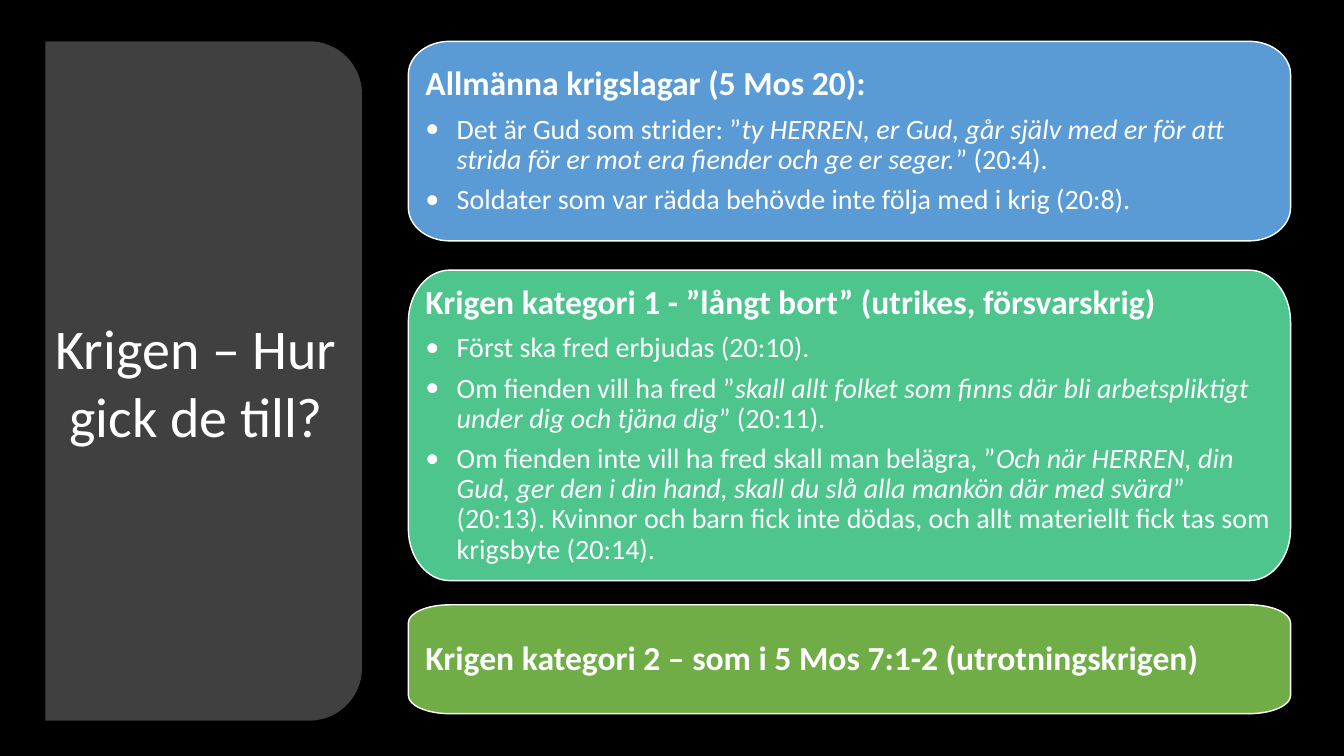
from lxml import etree
from pptx import Presentation
from pptx.dml.color import RGBColor
from pptx.enum.shapes import MSO_SHAPE
from pptx.enum.text import MSO_ANCHOR, MSO_AUTO_SIZE, PP_ALIGN
from pptx.oxml.ns import qn
from pptx.util import Inches, Pt

PANEL_SHAPE = MSO_SHAPE.ROUND_2_SAME_RECTANGLE
MIDDLE = MSO_ANCHOR.MIDDLE
NO_FIT = MSO_AUTO_SIZE.NONE
LEFT, CENTER = PP_ALIGN.LEFT, PP_ALIGN.CENTER
TITLE_ONLY = 5
CURVE = 0.55  # share of the way to the corner for a quarter ellipse

# Each card: top, height, colour, heading, bullets (odd parts are italic)
CARDS = [
    (0.41, 1.98, "5B9BD5", "Allmänna krigslagar (5 Mos 20):", [
        ["Det är Gud som strider: ”",
         "ty HERREN, er Gud, går själv med er för att strida för er mot era "
         "fiender och ge er seger.",
         "” (20:4)."],
        ["Soldater som var rädda behövde inte följa med i krig (20:8)."],
    ]),
    (2.68, 3.08, "4DC58D",
     "Krigen kategori 1 - ”långt bort” (utrikes, försvarskrig)", [
         ["Först ska fred erbjudas (20:10)."],
         ["Om fienden vill ha fred ”",
          "skall allt folket som finns där bli arbetspliktigt under dig och "
          "tjäna dig",
          "” (20:11)."],
         ["Om fienden inte vill ha fred skall man belägra, ”",
          "Och när HERREN, din Gud, ger den i din hand, skall du slå alla "
          "mankön där med svärd",
          "” (20:13). Kvinnor och barn fick inte dödas, och allt materiellt "
          "fick tas som krigsbyte (20:14)."],
     ]),
    (6.0, 1.08, "70AD47",
     "Krigen kategori 2 – som i 5 Mos 7:1-2 (utrotningskrigen)", []),
]


def color(hex_text):
    return RGBColor.from_string(hex_text)


class SlideBuilder:
    font_name = "Calibri"
    text_color = "FFFFFF"
    card_left, card_width = 4.05, 8.75
    corner_width = 0.41
    inset = 0.17
    indent = 0.31

    def __init__(self, page):
        self.page = page

    def background(self, fill):
        self.page.background.fill.solid()
        self.page.background.fill.fore_color.rgb = color(fill)

    def style(self, para, size, bold=False, align=LEFT):
        para.alignment = align
        para.font.name = self.font_name
        para.font.size = Pt(size)
        para.font.bold = bold
        para.font.color.rgb = color(self.text_color)

    def fill(self, shape, fill):
        shape.shadow.inherit = False
        shape.fill.solid()
        shape.fill.fore_color.rgb = color(fill)

    def frame(self, shape, inset):
        frame = shape.text_frame
        frame.word_wrap = True
        frame.auto_size = NO_FIT
        frame.vertical_anchor = MIDDLE
        frame.margin_left = frame.margin_right = Inches(inset)
        frame.margin_top = frame.margin_bottom = Inches(inset)
        return frame

    def title_panel(self, left, top, width, height, fill, text):
        # The panel is laid on its side, then turned a quarter
        panel = self.page.shapes.add_shape(
            PANEL_SHAPE,
            Inches(left + (width - height) / 2),
            Inches(top + (height - width) / 2),
            Inches(height), Inches(width))
        panel.rotation = 90
        self.fill(panel, fill)
        panel.line.fill.background()

        # Title in front of the panel, clear of its rounded side
        title = self.page.shapes.title
        title.element.addprevious(panel.element)
        title.left, title.top = Inches(left), Inches(top)
        title.width, title.height = Inches(width - 0.15), Inches(height)
        frame = self.frame(title, 0.05)
        frame.text = text
        self.style(frame.paragraphs[0], 40, align=CENTER)

    def card_shape(self, top, height):
        left, right = self.card_left, self.card_left + self.card_width
        bottom = top + height
        near_x, far_x = left + self.corner_width, right - self.corner_width
        near_y, far_y = top + height / 6, bottom - height / 6
        points = [(left, near_y), (near_x, top), (far_x, top),
                  (right, near_y), (right, far_y), (far_x, bottom),
                  (near_x, bottom), (left, far_y)]
        points = [(Inches(x), Inches(y)) for x, y in points]
        builder = self.page.shapes.build_freeform(*points[0])
        builder.add_line_segments(points[1:], close=True)
        box = builder.convert_to_shape()

        # Every other edge cuts a corner: bend it into a curve
        corners = [(0, 0), (box.width, 0), (box.width, box.height),
                   (0, box.height)]
        edges = list(box.element.iter(qn("a:lnTo")))[::2]
        for edge, corner in zip(edges, corners):
            self.bend(edge, corner)
        return box

    def bend(self, edge, corner):
        def place(point):
            return [int(point.get(axis)) for axis in "xy"]

        start, end = place(edge.getprevious()[-1]), place(edge[0])
        curve = etree.Element(qn("a:cubicBezTo"))
        for base, share in ((start, CURVE), (end, CURVE), (end, 0)):
            x, y = (round(value + share * (goal - value))
                    for value, goal in zip(base, corner))
            etree.SubElement(curve, qn("a:pt"), x=str(x), y=str(y))
        edge.getparent().replace(edge, curve)

    def card(self, top, height, fill, heading, bullets):
        box = self.card_shape(top, height)
        self.fill(box, fill)
        box.line.color.rgb = color("FFFFFF")
        box.line.width = Pt(1)

        frame = self.frame(box, self.inset)
        para = frame.paragraphs[0]
        para.text = heading
        self.card_style(para, 24, bold=True)
        for parts in bullets:
            self.bullet(frame.add_paragraph(), parts)

    def card_style(self, para, size, bold=False):
        self.style(para, size, bold)
        para.line_spacing = 0.9
        para.space_after = Pt(size * 0.35)

    def bullet(self, para, parts):
        for index, text in enumerate(parts):
            span = para.add_run()
            span.text = text
            if index % 2:
                span.font.italic = True
        self.card_style(para, 20)
        properties = para._p.get_or_add_pPr()
        properties.set("marL", str(Inches(self.indent)))
        properties.set("indent", str(-Inches(self.indent)))
        defaults = properties.find(qn("a:defRPr"))
        for tag, name, value in (("a:buFont", "typeface", self.font_name),
                                 ("a:buChar", "char", "•")):
            defaults.addprevious(etree.Element(qn(tag), {name: value}))


def main():
    deck = Presentation()
    deck.slide_width, deck.slide_height = Inches(13.33), Inches(7.5)
    page = deck.slides.add_slide(deck.slide_layouts[TITLE_ONLY])
    builder = SlideBuilder(page)

    # Background and title
    builder.background("000000")
    builder.title_panel(0.45, 0.41, 3.14, 6.74, "404040",
                        "Krigen – Hur gick de till?")

    # Cards
    for card in CARDS:
        builder.card(*card)

    deck.save("out.pptx")


if __name__ == "__main__":
    main()
